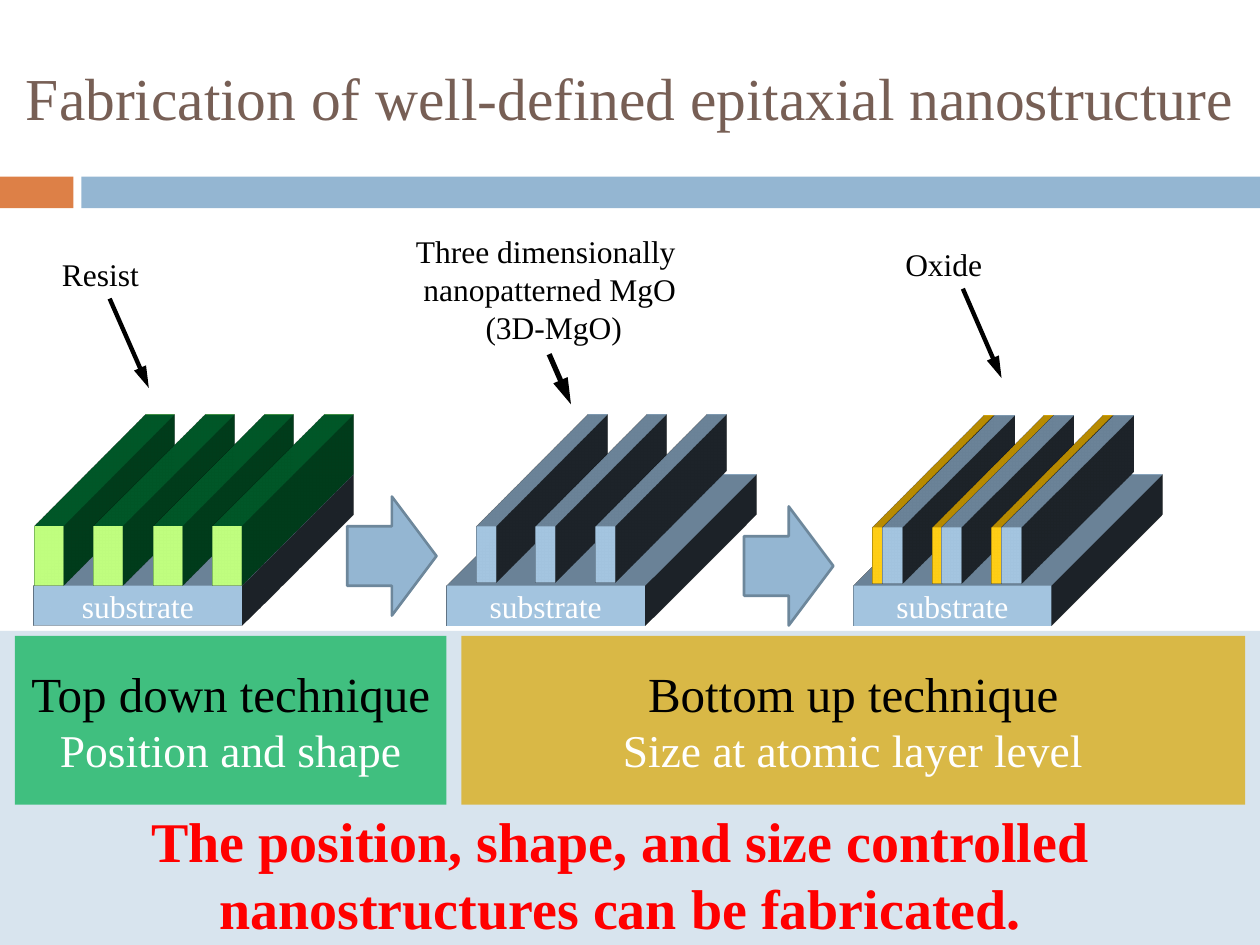
from lxml import etree
from pptx import Presentation
from pptx.dml.color import RGBColor
from pptx.enum import shapes, text
from pptx.oxml.ns import qn
from pptx.util import Cm, Pt

BLUE = RGBColor(0x94, 0xB6, 0xD2)
ORANGE = RGBColor(0xDD, 0x80, 0x47)
PALE = RGBColor(0xBF, 0xD3, 0xE4)
BROWN = RGBColor(0x77, 0x5F, 0x55)
EDGE = RGBColor(0x6D, 0x87, 0x9B)
LIME = RGBColor(0x92, 0xD0, 0x50)
GREEN = RGBColor(0x00, 0xB0, 0x50)
AMBER = RGBColor(0xFF, 0xC0, 0x00)
GOLD = RGBColor(0xDA, 0xA6, 0x00)
BLACK = RGBColor(0, 0, 0)
WHITE = RGBColor(255, 255, 255)
RED = RGBColor(255, 0, 0)

FONT = "Times New Roman"
RECT = shapes.MSO_SHAPE.RECTANGLE
ARROW = shapes.MSO_SHAPE.RIGHT_ARROW
LEFT, CENTER = text.PP_ALIGN.LEFT, text.PP_ALIGN.CENTER
TOP, MIDDLE = text.MSO_ANCHOR.TOP, text.MSO_ANCHOR.MIDDLE
FIT = text.MSO_AUTO_SIZE.SHAPE_TO_FIT_TEXT
DEPTH, PITCH = Cm(10.58), 1.2

MATERIALS = {"mgo": (BLUE, BLUE, "t"), "resist": (LIME, GREEN, "b"), "oxide": (AMBER, AMBER, "t")}

SCENES = [
    dict(substrate=(0.68, 4.2), count=4, bars=[("resist", 0.69, 0.59)], bar_y=(10.61, 1.2),
         label=["Resist"], box=(1.0, 5.01, 2.08, 1.02), align=LEFT, wrap=False,
         pointer=(2.21, 6.02, 3.0, 7.82), weight=2.5),
    dict(substrate=(9.0, 4.0), count=3, bars=[("mgo", 9.6, 0.4)], bar_y=(10.61, 1.13),
         label=["Three dimensionally ", "nanopatterned MgO", " (3D-MgO)"],
         box=(8.1, 4.56, 5.97, 2.57), align=CENTER, wrap=False,
         pointer=(11.07, 7.14, 11.51, 8.15), weight=3),
    dict(substrate=(17.2, 4.0), count=3, bars=[("oxide", 17.59, 0.2), ("mgo", 17.79, 0.41)],
         bar_y=(10.63, 1.13), label=["Oxide"], box=(18.0, 4.82, 2.44, 1.02),
         align=LEFT, wrap=True, pointer=(19.41, 5.82, 20.19, 7.62), weight=2.5),
]

BANDS = [((0, 3.56, 1.48, 0.64), ORANGE, None), ((1.64, 3.56, 23.76, 0.64), BLUE, None),
         ((0, 12.72, 25.4, 6.33), PALE, 60)]
STEPS = [(7.0, 10.01, 1.8, 2.4), (15.0, 10.21, 1.8, 2.4)]
PANELS = [
    ((0.3, 12.82, 8.7, 3.4), GREEN, "Top down technique", "Position and shape"),
    ((9.3, 12.82, 15.8, 3.4), GOLD, "Bottom up technique", "Size at atomic layer level"),
]


def add_xml(parent, tag, **attributes):
    return etree.SubElement(parent, qn(tag), {k: str(v) for k, v in attributes.items()})


def block(parent, kind, box, fill, alpha=None):
    sp = parent.add_shape(kind, *map(Cm, box))
    sp.shadow.inherit = False
    sp.fill.solid()
    sp.fill.fore_color.rgb = fill
    sp.line.fill.background()
    if alpha:
        add_xml(sp.fill._xPr.find(qn("a:solidFill"))[0], "a:alpha", val=alpha * 1000)
    return sp


def write(sp, lines, align=CENTER, anchor=MIDDLE, wrap=True):
    tf = sp.text_frame
    tf.word_wrap = wrap
    tf.vertical_anchor = anchor
    for i, (words, fmt) in enumerate(lines):
        p = tf.add_paragraph() if i else tf.paragraphs[0]
        p.alignment = align
        r = p.add_run()
        r.text = words
        r.font.name = FONT
        for key, value in fmt.items():
            if key == "color":
                r.font.color.rgb = value
            else:
                setattr(r.font, key, value)


def textbox(parent, box, lines, **layout):
    sp = parent.add_textbox(*map(Cm, box))
    write(sp, lines, **layout)
    return sp


def prism(parent, material, box):
    front, sides, light = MATERIALS[material]
    sp = block(parent, RECT, box, front)
    scene = add_xml(sp._element.spPr, "a:scene3d")
    add_xml(scene, "a:camera", prst="obliqueTopRight")
    add_xml(scene, "a:lightRig", rig="threePt", dir=light)
    solid = add_xml(sp._element.spPr, "a:sp3d", extrusionH=DEPTH)
    add_xml(add_xml(solid, "a:extrusionClr"), "a:srgbClr", val=sides)
    return sp


def pointer(parent, ends, weight):
    line = parent.add_connector(shapes.MSO_CONNECTOR.STRAIGHT, *map(Cm, ends))
    line.line.color.rgb = BLACK
    line.line.width = Pt(weight)
    add_xml(line.line._get_or_add_ln(), "a:tailEnd", type="triangle", w="med", len="lg")
    add_xml(line._element.spPr, "a:effectLst")


def draw_scene(s, scene):
    group = s.shapes.add_group_shape().shapes
    x, w = scene["substrate"]
    base = prism(group, "mgo", (x, 11.81, w, 0.81))
    write(base, [("substrate", dict(size=Pt(18), color=WHITE))])
    y, h = scene["bar_y"]
    for i in range(scene["count"]):
        for material, left, width in scene["bars"]:
            prism(group, material, (left + i * PITCH, y, width, h))
    pointer(group, scene["pointer"], scene["weight"])
    label = [(words, dict(size=Pt(18), color=BLACK)) for words in scene["label"]]
    sp = textbox(group, scene["box"], label, align=scene["align"], anchor=TOP, wrap=scene["wrap"])
    sp.text_frame.auto_size = FIT


def main():
    prs = Presentation()
    prs.slide_width, prs.slide_height = Cm(25.4), Cm(19.05)
    s = prs.slides.add_slide(prs.slide_layouts[6])
    for box, fill, alpha in BANDS:
        block(s.shapes, RECT, box, fill, alpha)
    textbox(s.shapes, (0, 0.58, 25.4, 2.74),
            [("Fabrication of well-defined epitaxial nanostructure", dict(size=Pt(34), color=BROWN))])
    for scene in SCENES:
        draw_scene(s, scene)
    for box in STEPS:
        sp = block(s.shapes, ARROW, box, BLUE)
        sp.line.color.rgb = EDGE
        sp.line.width = Pt(1.5)
    for box, fill, technique, result in PANELS:
        write(block(s.shapes, RECT, box, fill, 70),
              [(technique, dict(size=Pt(28), color=BLACK)), (result, dict(size=Pt(26), color=WHITE))])
    claim = textbox(s.shapes, (0.31, 16.13, 24.4, 3.0),
                    [("The position, shape, and size controlled nanostructures can be fabricated.",
                      dict(size=Pt(32), color=RED, bold=True))], anchor=TOP)
    claim.text_frame.auto_size = FIT
    prs.save("out.pptx")


if __name__ == "__main__":
    main()
